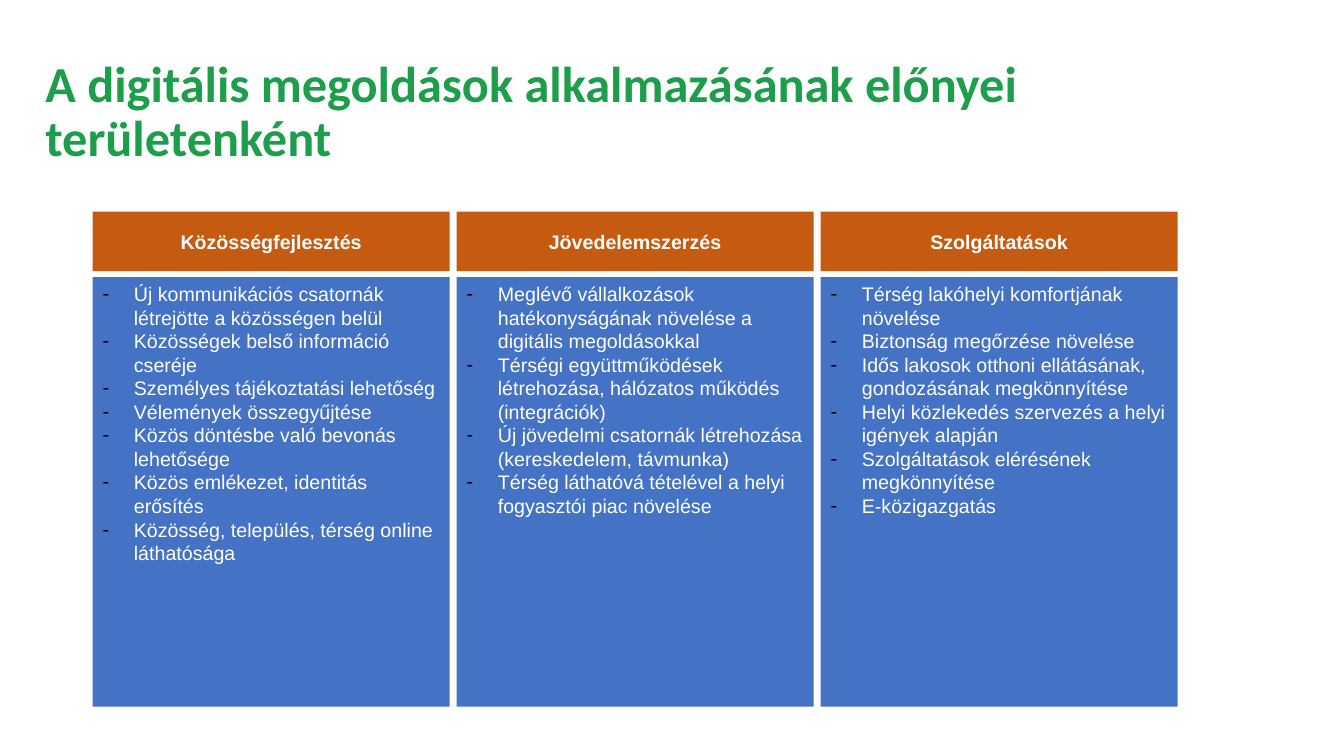
from dataclasses import dataclass

from lxml import etree
from pptx import Presentation
from pptx.dml.color import RGBColor
from pptx.enum.shapes import MSO_SHAPE as Shape
from pptx.enum.text import MSO_ANCHOR as Anchor, MSO_AUTO_SIZE as Fit, PP_ALIGN as Align
from pptx.oxml.ns import qn
from pptx.util import Pt

PX = 9144  # EMU per px, 100 px to the inch
COLORS = {"title": "1C9E4A", "head": "C55A11", "body": "4472C4",
          "text": "FFFFFF", "dash": "000000"}
LEFT, WIDTH, STEP = 92, 354, 361
HEAD_TOP, HEAD_HIGH = 210, 59
BODY_TOP, BODY_HIGH = 275, 426
INDENT = 31


@dataclass
class Column:
    head: str
    items: list[str]


COLUMNS = [
    Column("Közösségfejlesztés", [
        "Új kommunikációs csatornák létrejötte a közösségen belül",
        "Közösségek belső információ cseréje",
        "Személyes tájékoztatási lehetőség",
        "Vélemények összegyűjtése",
        "Közös döntésbe való bevonás lehetősége",
        "Közös emlékezet, identitás erősítés",
        "Közösség, település, térség online láthatósága",
    ]),
    Column("Jövedelemszerzés", [
        "Meglévő vállalkozások hatékonyságának növelése a digitális megoldásokkal",
        "Térségi együttműködések létrehozása, hálózatos működés (integrációk)",
        "Új jövedelmi csatornák létrehozása (kereskedelem, távmunka)",
        "Térség láthatóvá tételével a helyi fogyasztói piac növelése",
    ]),
    Column("Szolgáltatások", [
        "Térség lakóhelyi komfortjának növelése",
        "Biztonság megőrzése növelése",
        "Idős lakosok otthoni ellátásának, gondozásának megkönnyítése",
        "Helyi közlekedés szervezés a helyi igények alapján",
        "Szolgáltatások elérésének megkönnyítése",
        "E-közigazgatás",
    ]),
]


def rgb(name: str) -> RGBColor:
    return RGBColor.from_string(COLORS[name])


def style(par, face: str, size: int, color: str, bold: bool) -> None:
    for run in par.runs:
        font = run.font
        font.name, font.size, font.bold = face, Pt(size), bold
        font.color.rgb = rgb(color)


def add_dash(par) -> None:
    props = par._p.get_or_add_pPr()
    props.set("marL", str(INDENT * PX))
    props.set("indent", str(-INDENT * PX))
    tint = etree.SubElement(props, qn("a:buClr"))
    etree.SubElement(tint, qn("a:srgbClr"), val=COLORS["dash"])
    etree.SubElement(props, qn("a:buFont"), typeface="Arial")
    etree.SubElement(props, qn("a:buChar"), char="-")


def add_box(slide, left: int, top: int, high: int, fill: str,
            lines: list[str], is_head: bool) -> None:
    box = slide.shapes.add_shape(Shape.RECTANGLE, left * PX, top * PX,
                                 WIDTH * PX, high * PX)
    box.shadow.inherit = False
    box.fill.solid()
    box.fill.fore_color.rgb = rgb(fill)
    box.line.fill.background()
    frame = box.text_frame
    frame.word_wrap = True
    frame.vertical_anchor = Anchor.MIDDLE if is_head else Anchor.TOP
    frame.text = "\n".join(lines)
    for par in frame.paragraphs:
        par.alignment = Align.CENTER if is_head else Align.LEFT
        if not is_head:
            add_dash(par)
        style(par, "Arial", 14, "text", is_head)


def add_title(slide, text: str) -> None:
    title = slide.shapes.title
    title.left, title.top = 35 * PX, 40 * PX
    title.width, title.height = 1264 * PX, 145 * PX
    frame = title.text_frame
    frame.text = text
    frame.word_wrap = True
    frame.auto_size = Fit.NONE
    frame.vertical_anchor = Anchor.MIDDLE
    par = frame.paragraphs[0]
    par.alignment = Align.LEFT
    par.line_spacing = 0.9
    style(par, "Calibri", 36, "title", True)


def main() -> None:
    deck = Presentation()
    deck.slide_width, deck.slide_height = 1333 * PX, 750 * PX
    slide = deck.slides.add_slide(deck.slide_layouts[5])

    # Title
    add_title(slide, "A digitális megoldások alkalmazásának előnyei területenként")

    # Columns: a heading above a list
    for i, col in enumerate(COLUMNS):
        left = LEFT + i * STEP
        add_box(slide, left, HEAD_TOP, HEAD_HIGH, "head", [col.head], True)
        add_box(slide, left, BODY_TOP, BODY_HIGH, "body", col.items, False)

    deck.save("out.pptx")


if __name__ == "__main__":
    main()
